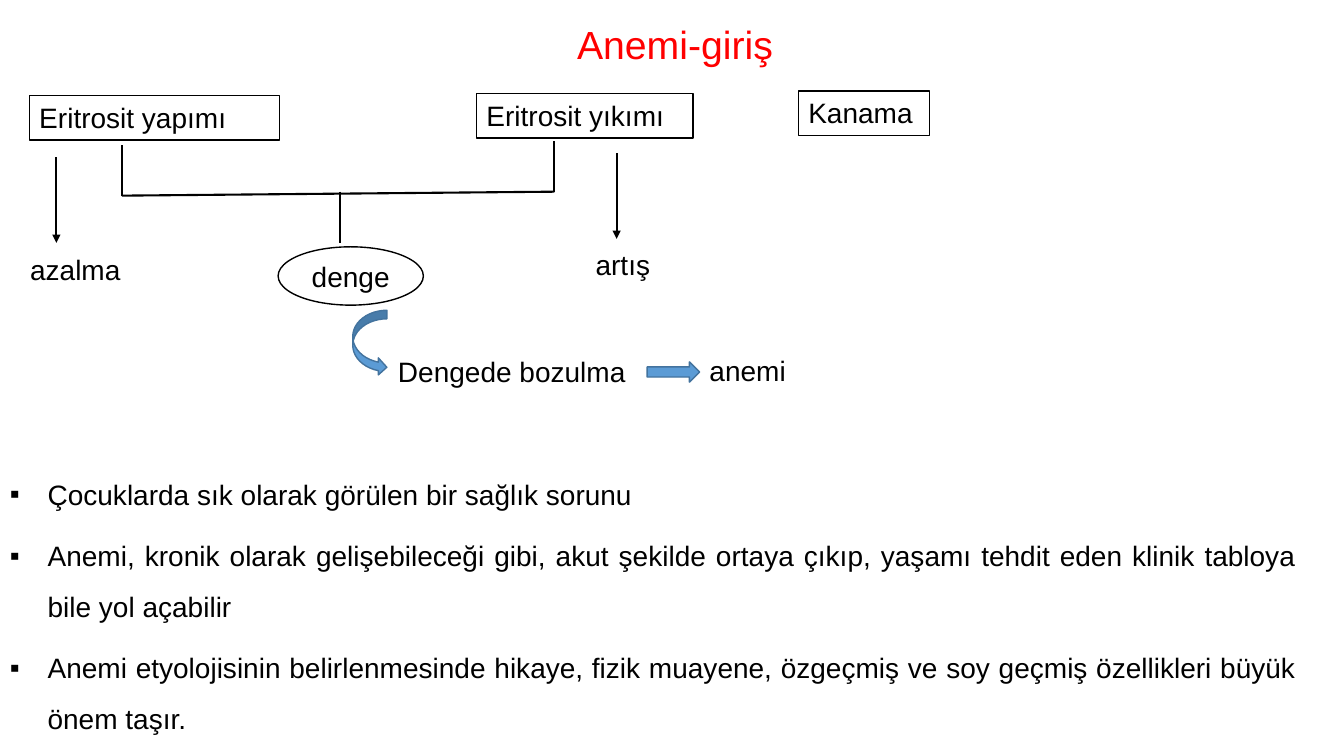
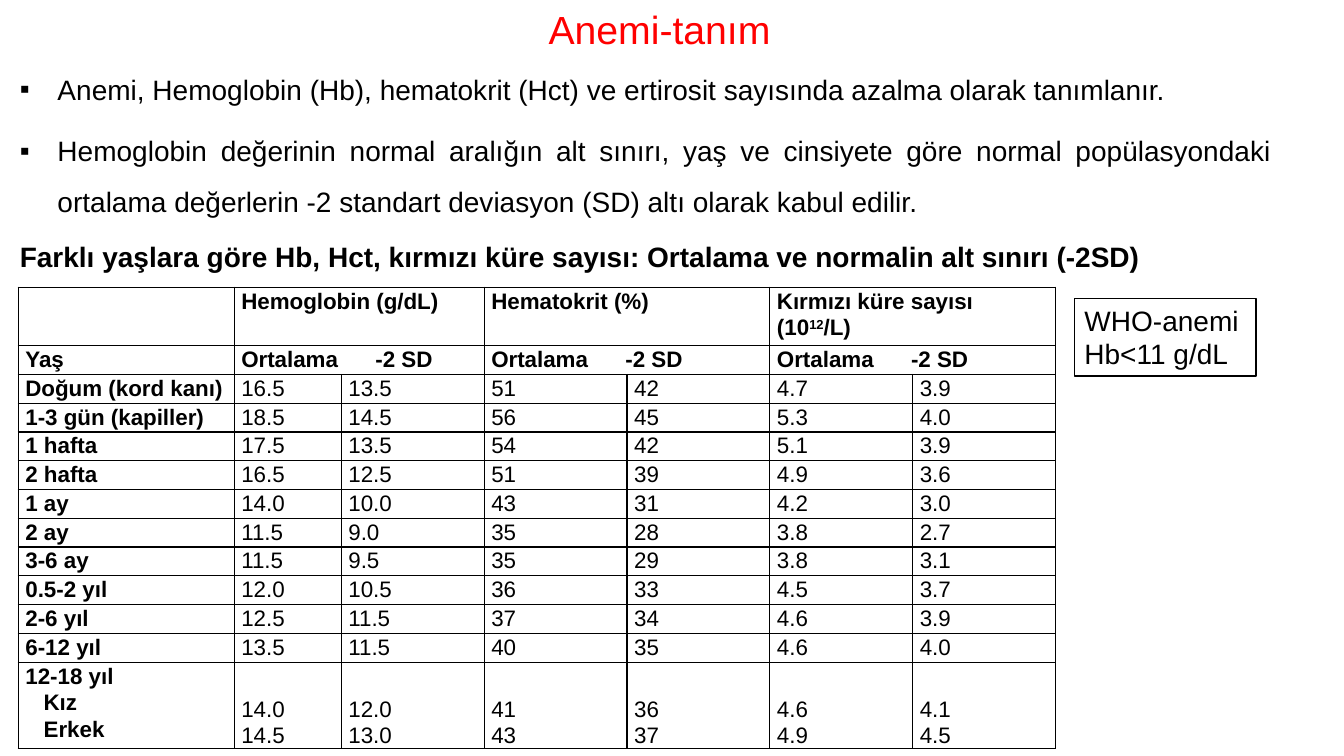
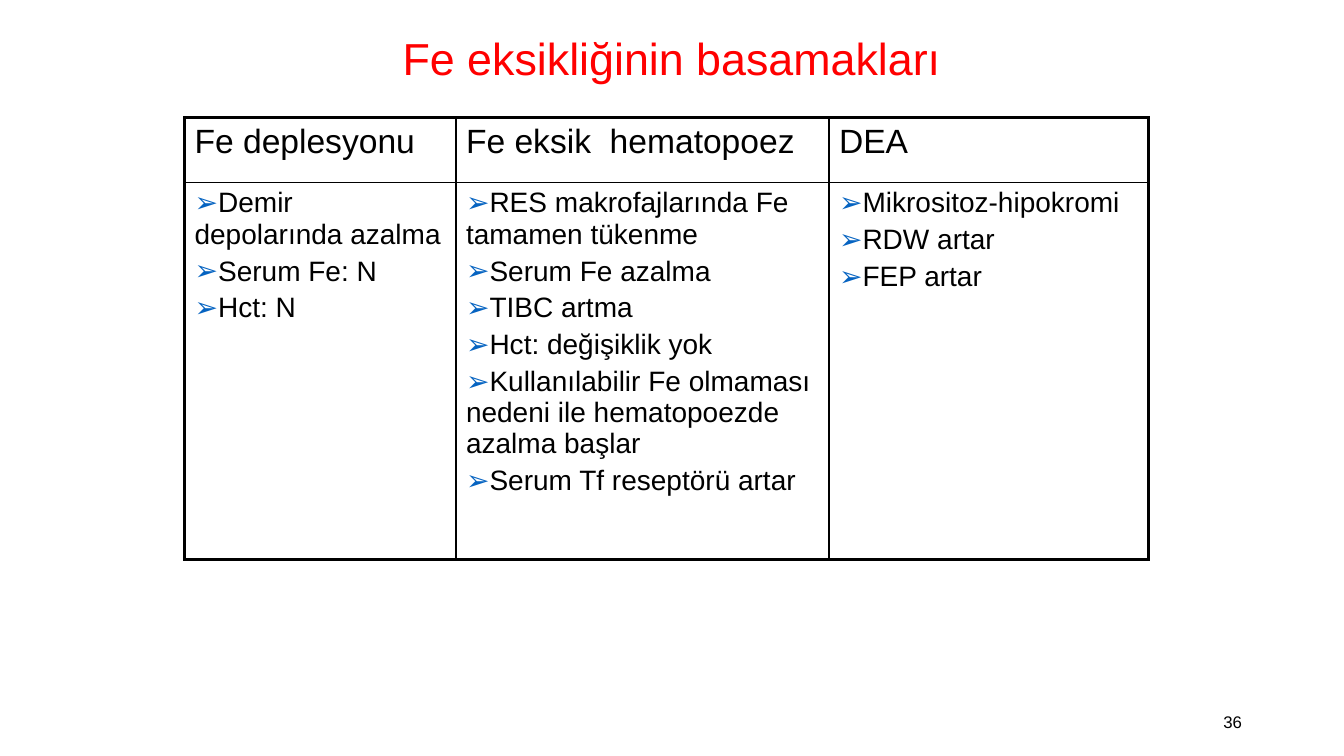
"""Build three slides on anemia: introduction, definition and stages of iron lack."""
from dataclasses import dataclass
from typing import NamedTuple

from lxml.etree import SubElement
from pptx import Presentation
from pptx.dml.color import RGBColor as Rgb
from pptx.enum.shapes import MSO_CONNECTOR as Link, MSO_SHAPE as Form
from pptx.enum.text import MSO_ANCHOR as Anchor, PP_ALIGN as Align
from pptx.oxml.ns import qn
from pptx.util import Cm, Pt

FONT = "Arial"
BLACK, WHITE, RED = "000000", "FFFFFF", "FF0000"
BLUE, NAVY, LINK = "5B9BD5", "43739E", "0563C1"
THIN, THICK = 1, 2.25


@dataclass
class Box:
    left: float
    top: float
    width: float
    height: float
    text: str = ""
    form: Form | None = None
    fill: str = WHITE
    edge: str = BLACK


class Line(NamedTuple):
    x1: float
    y1: float
    x2: float
    y2: float
    arrow: bool = False


BOXES = [
    Box(0.74, 2.41, 6.3, 1.12, "Eritrosit yapımı", Form.RECTANGLE),
    Box(12.01, 2.36, 5.46, 1.12, "Eritrosit yıkımı", Form.RECTANGLE),
    Box(20.12, 2.29, 3.3, 1.12, "Kanama", Form.RECTANGLE),
    Box(7.01, 6.22, 3.66, 1.47, "denge", Form.OVAL),
    Box(8.89, 7.82, 0.86, 1.65, "", Form.CURVED_RIGHT_ARROW, BLUE, NAVY),
    Box(16.31, 9.12, 1.32, 0.51, "", Form.RIGHT_ARROW, BLUE, NAVY),
    Box(9.78, 8.81, 7.37, 1.12, "Dengede bozulma"),
    Box(17.63, 8.79, 2.79, 1.12, "anemi"),
    Box(0.51, 6.25, 3.96, 1.12, "azalma"),
    Box(14.76, 6.12, 2.72, 1.12, "artış"),
]
LINES = [
    Line(3.07, 4.93, 13.97, 4.83),
    Line(8.56, 4.83, 8.56, 6.12),
    Line(3.07, 3.66, 3.07, 4.93),
    Line(13.97, 3.56, 13.97, 4.83),
    Line(1.42, 3.96, 1.42, 6.12, True),
    Line(15.54, 3.86, 15.54, 6.02, True),
]
INTRO = """Çocuklarda sık olarak görülen bir sağlık sorunu
Anemi, kronik olarak gelişebileceği gibi, akut şekilde ortaya çıkıp, yaşamı tehdit eden klinik tabloya bile yol açabilir
Anemi etyolojisinin belirlenmesinde hikaye, fizik muayene, özgeçmiş ve soy geçmiş özellikleri büyük önem taşır."""
MEANING = """Anemi, Hemoglobin (Hb), hematokrit (Hct) ve ertirosit sayısında azalma olarak tanımlanır.
Hemoglobin değerinin normal aralığın alt sınırı, yaş ve cinsiyete göre normal popülasyondaki ortalama değerlerin -2 standart deviasyon (SD) altı olarak kabul edilir."""
CAPTION = "Farklı yaşlara göre Hb, Hct, kırmızı küre sayısı: Ortalama ve normalin alt sınırı (-2SD)"
PAIR = "Ortalama\t-2 SD"
AGES = [
    ["", "Hemoglobin (g/dL)", "", "Hematokrit (%)", "", "Kırmızı küre sayısı\n(10^12^/L)", ""],
    ["Yaş", PAIR, "", PAIR, "", PAIR, ""],
    ["Doğum (kord kanı)", "16.5", "13.5", "51", "42", "4.7", "3.9"],
    ["1-3 gün (kapiller)", "18.5", "14.5", "56", "45", "5.3", "4.0"],
    ["1 hafta", "17.5", "13.5", "54", "42", "5.1", "3.9"],
    ["2 hafta", "16.5", "12.5", "51", "39", "4.9", "3.6"],
    ["1 ay", "14.0", "10.0", "43", "31", "4.2", "3.0"],
    ["2 ay", "11.5", "9.0", "35", "28", "3.8", "2.7"],
    ["3-6 ay", "11.5", "9.5", "35", "29", "3.8", "3.1"],
    ["0.5-2 yıl", "12.0", "10.5", "36", "33", "4.5", "3.7"],
    ["2-6 yıl", "12.5", "11.5", "37", "34", "4.6", "3.9"],
    ["6-12 yıl", "13.5", "11.5", "40", "35", "4.6", "4.0"],
    ["12-18 yıl\nKız\nErkek", "14.0\n14.5", "12.0\n13.0", "41\n43", "36\n37", "4.6\n4.9", "4.1\n4.5"],
]
STAGES = [
    ["Fe deplesyonu", "Fe eksik  hematopoez", "DEA"],
    [
        "Demir depolarında azalma\nSerum Fe: N\nHct: N",
        "RES makrofajlarında Fe tamamen tükenme\nSerum Fe azalma\nTIBC artma\nHct: değişiklik yok\n"
        "Kullanılabilir Fe olmaması nedeni ile hematopoezde azalma başlar\nSerum Tf reseptörü artar",
        "Mikrositoz-hipokromi\nRDW artar\nFEP artar",
    ],
]


def paint(code: str) -> Rgb:
    """Turn a hex string into a colour."""
    return Rgb.from_string(code)


def add_mark(para, sign: str, tint: str | None, hang: float) -> None:
    """Give a paragraph a bullet with a hanging indent."""
    props = para._p.get_or_add_pPr()
    props.set("marL", str(Cm(hang)))
    props.set("indent", str(-Cm(hang)))
    if tint:
        SubElement(SubElement(props, qn("a:buClr")), qn("a:srgbClr"), val=tint)
    SubElement(props, qn("a:buFont"), typeface=FONT)
    SubElement(props, qn("a:buChar"), char=sign)


def write(frame, text: str, *, size: float = 20, color: str = BLACK, bold: bool = False,
          align: Align = Align.LEFT, lead: float | None = None, first: float | None = None,
          before: float = 0, after: float = 0, mark: str = "", tint: str | None = None,
          hang: float = 0, stop: float = 0) -> None:
    """Fill a frame, one paragraph a line, raising what stands between carets."""
    frame.word_wrap = True
    for row, line in enumerate(text.split("\n")):
        para = frame.add_paragraph() if row else frame.paragraphs[0]
        para.alignment = align
        space = lead if row or first is None else first
        if space:
            para.line_spacing = space
        para.space_before = Pt(before if row else 0)
        para.space_after = Pt(after)
        if mark:
            add_mark(para, mark, tint, hang)
        if stop and "\t" in line:
            tabs = SubElement(para._p.get_or_add_pPr(), qn("a:tabLst"))
            SubElement(tabs, qn("a:tab"), pos=str(Cm(stop)), algn="l")
        for part, piece in enumerate(line.split("^")):
            run = para.add_run()
            run.text = piece
            run.font.name, run.font.size, run.font.bold = FONT, Pt(size), bold
            run.font.color.rgb = paint(color)
            if part % 2:
                run._r.get_or_add_rPr().set("baseline", "30000")


def add_box(slide, box: Box, **style) -> None:
    """Draw a text box, or a shape when the box has a form."""
    place = [Cm(n) for n in (box.left, box.top, box.width, box.height)]
    if box.form is None:
        shape = slide.shapes.add_textbox(*place)
    else:
        shape = slide.shapes.add_shape(box.form, *place)
        shape.shadow.inherit = False
        shape.fill.solid()
        shape.fill.fore_color.rgb = paint(box.fill)
        shape.line.color.rgb = paint(box.edge)
        shape.line.width = Pt(THIN)
        shape.text_frame.vertical_anchor = Anchor.TOP
    if box.form == Form.OVAL:
        shape.text_frame.vertical_anchor = Anchor.MIDDLE
        style["align"] = Align.CENTER
    if box.text:
        write(shape.text_frame, box.text, **style)


def add_title(slide, box: Box, size: float = 28) -> None:
    """Write the red centred title."""
    add_box(slide, box, size=size, color=RED, align=Align.CENTER)


def add_list(slide, box: Box, first: float = 1.5) -> None:
    """Write justified text with square bullets."""
    add_box(slide, box, align=Align.JUSTIFY, lead=1.5, first=first, after=8, mark="▪", hang=0.95)


def add_line(slide, line: Line) -> None:
    """Draw a black line, with a head if it is an arrow."""
    wire = slide.shapes.add_connector(Link.STRAIGHT, *[Cm(n) for n in line[:4]])
    wire.line.color.rgb = paint(BLACK)
    wire.line.width = Pt(1.5)
    if line.arrow:
        SubElement(wire.line._get_or_add_ln(), qn("a:tailEnd"), type="triangle")
    SubElement(wire._element.spPr, qn("a:effectLst"))


def add_edge(cell, side: str, width: float) -> None:
    """Draw one border of a cell."""
    edge = SubElement(cell._tc.get_or_add_tcPr(), qn(f"a:ln{side}"), w=str(Pt(width)))
    SubElement(SubElement(edge, qn("a:solidFill")), qn("a:srgbClr"), val=BLACK)


def add_grid(slide, left: float, top: float, wide: list[float], high: list[float], outer: float):
    """Add a plain white table with black borders."""
    grid = slide.shapes.add_table(len(high), len(wide), Cm(left), Cm(top),
                                  Cm(sum(wide)), Cm(sum(high))).table
    grid.first_row = grid.horz_banding = False
    for col, width in zip(grid.columns, wide):
        col.width = Cm(width)
    for r, height in enumerate(high):
        grid.rows[r].height = Cm(height)
        for c in range(len(wide)):
            cell = grid.cell(r, c)
            rims = {"L": c == 0, "R": c == len(wide) - 1, "T": r == 0, "B": r == len(high) - 1}
            for side, rim in rims.items():
                add_edge(cell, side, outer if rim else THIN)
            cell.fill.solid()
            cell.fill.fore_color.rgb = paint(WHITE)
    return grid


def draw_intro(slide) -> None:
    """Show the balance of red cells."""
    for line in LINES:
        add_line(slide, line)
    for box in BOXES:
        add_box(slide, box)
    add_title(slide, Box(0.74, 0.38, 32.54, 1.45, "Anemi-giriş"))
    add_list(slide, Box(0, 11.48, 32.92, 7.57, INTRO))


def draw_norms(slide) -> None:
    """Show the definition and the norms by age."""
    add_title(slide, Box(0.25, 0, 32.74, 1.45, "Anemi-tanım"))
    add_list(slide, Box(0.25, 1.7, 32.05, 3.96, MEANING), first=1)
    add_box(slide, Box(0.25, 5.92, 32.05, 1.12, CAPTION), bold=True)
    wide = [5.44, 2.7] + [3.6] * 5
    high = [1.47] + [0.72] * 11 + [2.17]
    grid = add_grid(slide, 0.46, 7.24, wide, high, THIN)
    last = len(AGES) - 1
    for r, row in enumerate(AGES):
        for c, text in enumerate(row):
            cell = grid.cell(r, c)
            cell.margin_left = cell.margin_right = Cm(0.18)
            cell.margin_top = cell.margin_bottom = 0
            if r == last and c:
                cell.vertical_anchor = Anchor.BOTTOM
            write(cell.text_frame, text, size=16, bold=r < 2 or c == 0, lead=1.07, stop=3.38)
    for para in grid.cell(last, 0).text_frame.paragraphs[1:]:
        para._p.get_or_add_pPr().set("marL", str(Cm(0.46)))
    for r in range(2):
        for c in range(1, 7, 2):
            grid.cell(r, c).merge(grid.cell(r, c + 1))
    add_box(slide, Box(27.08, 7.52, 4.57, 1.96, "WHO-anemi\nHb<11 g/dL", Form.RECTANGLE))


def draw_stages(slide) -> None:
    """Show the stages of iron lack."""
    add_box(slide, Box(23.93, 17.8, 7.62, 1.02, "36"), size=12, align=Align.RIGHT)
    add_title(slide, Box(4.65, 0.64, 24.56, 1.6, "Fe eksikliğinin basamakları"), 32)
    grid = add_grid(slide, 4.65, 2.97, [6.84, 9.4, 8.06], [1.63, 9.5], THICK)
    for c, (head, body) in enumerate(zip(*STAGES)):
        write(grid.cell(0, c).text_frame, head, size=24)
        write(grid.cell(1, c).text_frame, body, before=4, mark="➢", tint=LINK)


def main() -> None:
    """Build and save the slides."""
    deck = Presentation()
    deck.slide_width, deck.slide_height = Cm(33.87), Cm(19.05)
    for draw in (draw_intro, draw_norms, draw_stages):
        draw(deck.slides.add_slide(deck.slide_layouts[6]))
    deck.save("out.pptx")


if __name__ == "__main__":
    main()
